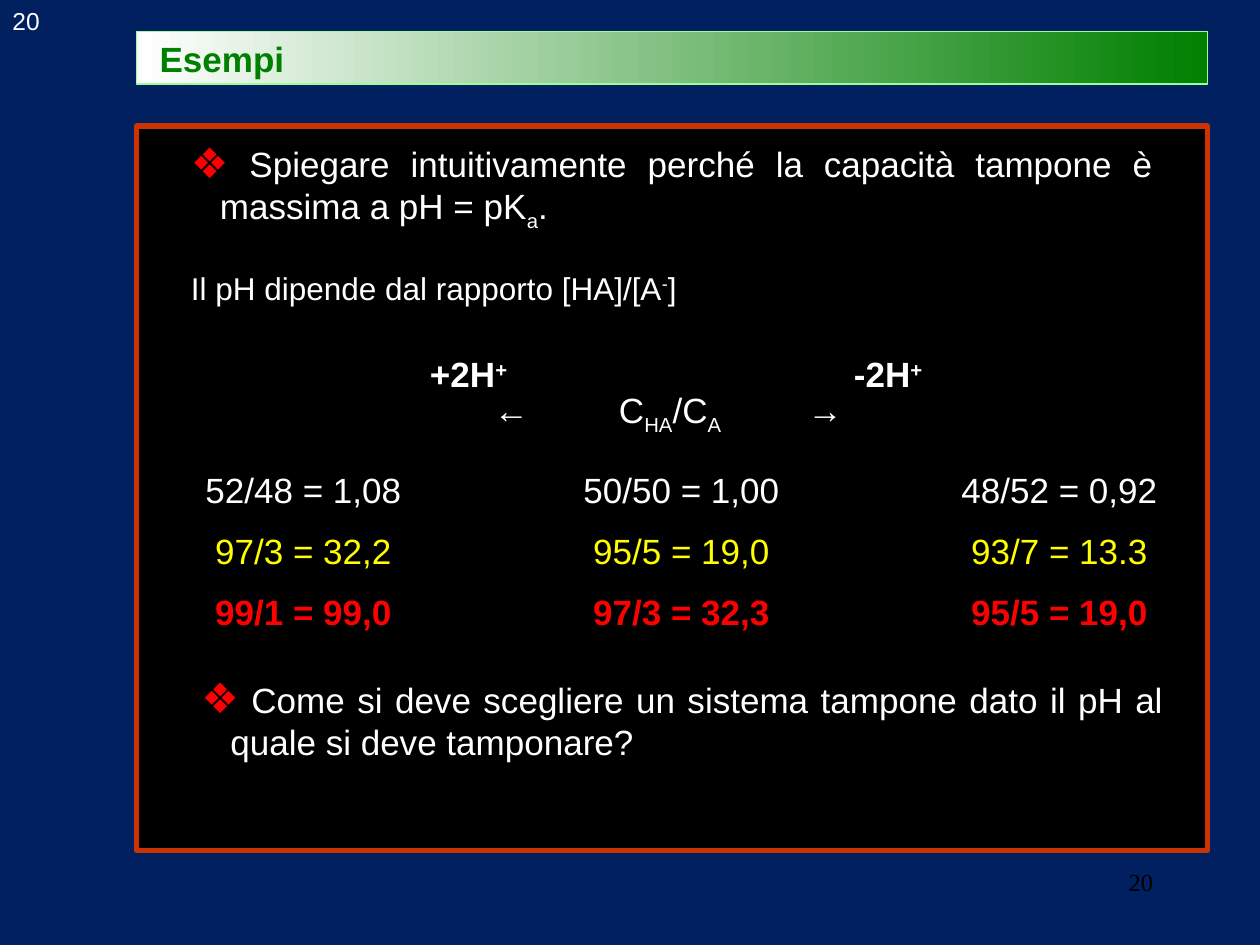
"""Build the slide on buffer capacity examples."""
from dataclasses import dataclass
from lxml.etree import SubElement
from pptx import Presentation
from pptx.dml.color import RGBColor
from pptx.enum.shapes import MSO_SHAPE
from pptx.enum.text import MSO_ANCHOR, PP_ALIGN
from pptx.oxml.ns import qn
from pptx.util import Emu, Inches, Pt

WIDE, HIGH = Inches(10), Inches(7.5)
COLS, ROWS = 120, 90
WHITE, RED, GREEN, GOLD = "FFFFFF", "FF0000", "008000", "FFFF00"
SHIFT = {"_": -25000, "^": 30000}
HANG = Inches(0.23)
INK = {"size": 20, "color": WHITE}


@dataclass(frozen=True)
class Area:
    col: float
    row: float
    cols: float
    rows: float

    def place(self) -> tuple[Emu, Emu, Emu, Emu]:
        dx, dy = WIDE / COLS, HIGH / ROWS
        return (Emu(round(self.col * dx)), Emu(round(self.row * dy)),
                Emu(round(self.cols * dx)), Emu(round(self.rows * dy)))


@dataclass(frozen=True)
class Block:
    area: Area
    lines: tuple[tuple[str, dict], ...]


def tint(code: str) -> RGBColor:
    return RGBColor.from_string(code)


def write(frame, text: str, *, first=False, size=20, color=WHITE, bold=False,
          font="Arial", align=PP_ALIGN.LEFT, before=0, lead=None,
          bullet=None, tabs=()) -> None:
    para = frame.paragraphs[0] if first else frame.add_paragraph()
    para.alignment = align
    para.space_before = Pt(before)
    if lead:
        para.line_spacing = lead
    props = para._p.get_or_add_pPr()
    if bullet:
        props.set("marL", str(HANG))
        props.set("indent", str(-HANG))
        SubElement(SubElement(props, qn("a:buClr")), qn("a:srgbClr"), val=RED)
        SubElement(props, qn("a:buSzPct"), val="120000")
        SubElement(props, qn("a:buFont"), typeface=font)
        SubElement(props, qn("a:buChar"), char=bullet)
    if tabs:
        stops = SubElement(props, qn("a:tabLst"))
        for stop in tabs:
            SubElement(stops, qn("a:tab"), pos=str(Inches(stop)), algn="ctr")
    for part in text.split("|"):
        base = SHIFT.get(part[:1])
        run = para.add_run()
        run.text = part[1:] if base else part
        run.font.name, run.font.size, run.font.bold = font, Pt(size), bold
        run.font.color.rgb = tint(color)
        if base:
            run.font._element.set("baseline", str(base))


def draw_block(shapes, block: Block) -> None:
    frame = shapes.add_textbox(*block.area.place()).text_frame
    frame.word_wrap = True
    for i, (text, style) in enumerate(block.lines):
        write(frame, text, first=i == 0, **style)


def draw_rect(shapes, area: Area, edge: str, width: float):
    shape = shapes.add_shape(MSO_SHAPE.RECTANGLE, *area.place())
    shape.shadow.inherit = False
    shape.line.color.rgb = tint(edge)
    shape.line.width = Pt(width)
    return shape


def draw_title(slide, text: str, area: Area) -> None:
    title = slide.shapes.title
    title.left, title.top, title.width, title.height = area.place()
    frame = title.text_frame
    frame.vertical_anchor = MSO_ANCHOR.TOP
    frame.word_wrap = True
    write(frame, text, first=True, color=GREEN, bold=True)
    slide.shapes._spTree.append(title._element)


POINT = INK | {"bullet": "❖", "align": PP_ALIGN.JUSTIFY}
GRID = {"tabs": (0.81, 3.81, 6.81)}
RATIOS = (
    (("52/48 = 1,08", "50/50 = 1,00", "48/52 = 0,92"), {"color": WHITE}),
    (("97/3 = 32,2", "95/5 = 19,0", "93/7 = 13.3"),
     {"color": GOLD, "before": 11}),
    (("99/1 = 99,0", "97/3 = 32,3", "95/5 = 19,0"),
     {"color": RED, "before": 11, "bold": True}),
)
BLOCKS = (
    Block(Area(17, 13, 94, 9.2), ((
        " Spiegare intuitivamente perché la capacità tampone è massima"
        " a pH = pK|_a|.", POINT),)),
    Block(Area(18, 33, 94, 8.2), (
        ("\t+2H|^+|\t-2H|^+", INK | {"bold": True, "tabs": (2.12, 5.45)}),
        ("\t←\tC|_HA|/C|_A|\t→",
         INK | {"lead": 0.75, "tabs": (2.46, 3.72, 4.95)}))),
    Block(Area(18, 44, 94, 17.2), tuple(
        ("\t" + "\t".join(row), GRID | style) for row, style in RATIOS)),
    Block(Area(18, 64, 94, 9.2), ((
        " Come si deve scegliere un sistema tampone dato il pH al quale"
        " si deve tamponare?", POINT),)),
    Block(Area(17, 25, 49, 4.8), ((
        "Il pH dipende dal rapporto [HA]/[A|^-|]", INK | {"size": 18}),)),
    Block(Area(0, 0, 9, 4), (("20", INK | {"size": 14}),)),
    Block(Area(83, 82, 28, 4), ((
        "20", {"size": 14, "color": "000000", "font": "Times New Roman",
               "align": PP_ALIGN.RIGHT}),)),
)


def main() -> None:
    deck = Presentation()
    deck.slide_width, deck.slide_height = WIDE, HIGH
    slide = deck.slides.add_slide(deck.slide_layouts[5])
    back = slide.background.fill
    back.solid()
    back.fore_color.rgb = tint("002060")
    panel = draw_rect(slide.shapes, Area(13, 12, 102, 69), "CC3300", 3)
    panel.fill.solid()
    panel.fill.fore_color.rgb = tint("000000")
    for block in BLOCKS:
        draw_block(slide.shapes, block)
    bar = draw_rect(slide.shapes, Area(13, 3, 102, 5), "99FF99", 0.75)
    bar.fill.gradient()
    bar.fill.gradient_angle = 0
    for stop, code in zip(bar.fill.gradient_stops, (WHITE, GREEN)):
        stop.color.rgb = tint(code)
    draw_title(slide, "Esempi", Area(14, 3, 18.4, 5.2))
    deck.save("out.pptx")


if __name__ == "__main__":
    main()
